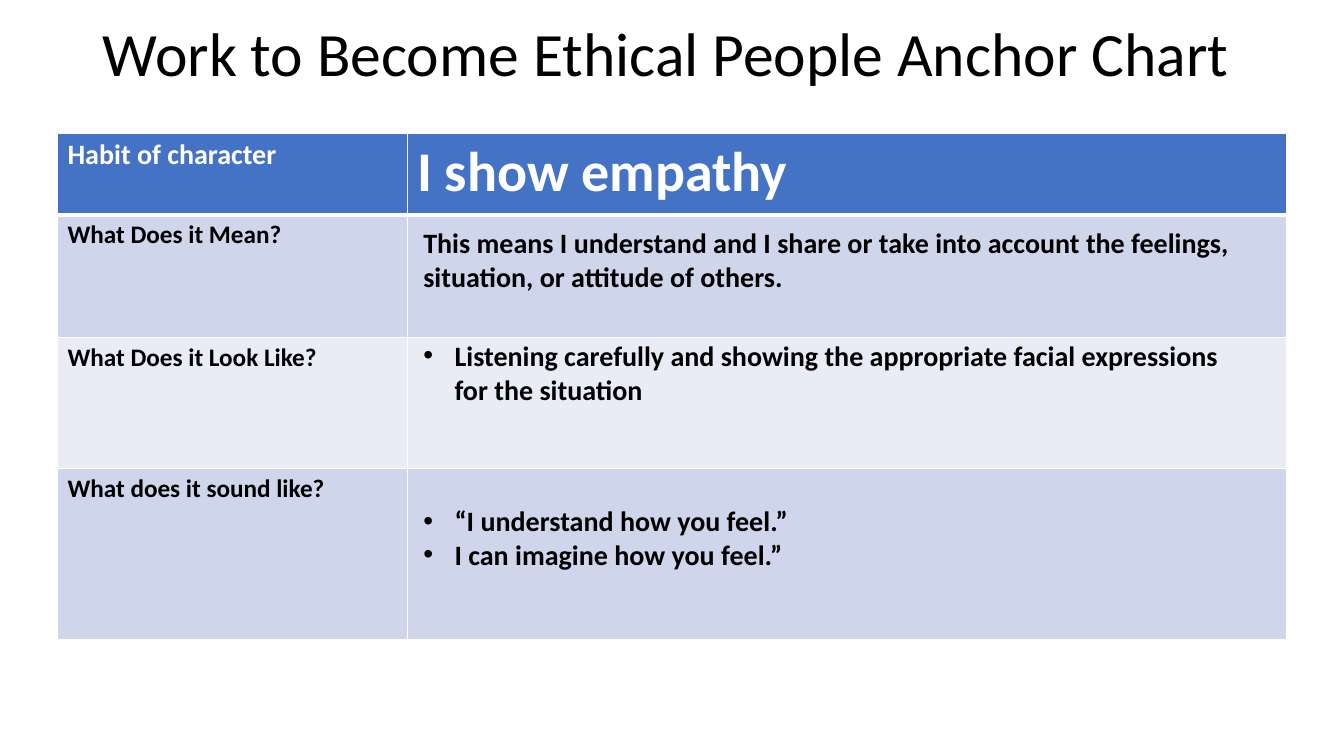
from dataclasses import dataclass

from lxml.etree import SubElement
from pptx import Presentation
from pptx.dml.color import RGBColor
from pptx.enum.text import MSO_ANCHOR, MSO_AUTO_SIZE, PP_ALIGN
from pptx.oxml.ns import qn
from pptx.slide import Slide
from pptx.table import _Cell
from pptx.text.text import _Paragraph
from pptx.util import Inches, Pt

FONT = "Calibri"
BLACK = "000000"
WHITE = "FFFFFF"
TITLE = "Work to Become Ethical People Anchor Chart"
COLUMN_WIDTHS = (3.47, 8.72)
BULLET_INDENT = 0.31


@dataclass(frozen=True)
class ChartRow:
    label: str
    height: float
    fill: str
    heading: str = ""
    size: int = 18
    color: str = BLACK
    top_border: int = 1
    bottom_border: int = 1


@dataclass(frozen=True)
class Answer:
    top: float
    width: float
    lines: tuple[str, ...]
    bulleted: bool = True


ROWS = (
    ChartRow("Habit of character", 0.81, "4472C4", "I show empathy", 20, WHITE, bottom_border=3),
    ChartRow("What Does it Mean?", 1.22, "CFD5EA", top_border=3),
    ChartRow("What Does it Look Like?", 1.3, "E9EBF5"),
    ChartRow("What does it sound like?", 1.7, "CFD5EA"),
)

ANSWERS = (
    Answer(2.19, 8.28, (
        "This means I understand and I share or take into account the feelings, "
        "situation, or attitude of others.",
    ), bulleted=False),
    Answer(3.31, 8.35, (
        "Listening carefully and showing the appropriate facial expressions for the situation",
    )),
    Answer(4.95, 8.35, ("“I understand how you feel.”", "I can imagine how you feel.”")),
)


def rgb(color: str) -> RGBColor:
    return RGBColor.from_string(color)


def add_run(paragraph: _Paragraph, text: str, size: int, color: str = BLACK, bold: bool = True) -> None:
    run = paragraph.add_run()
    run.text = text
    run.font.name = FONT
    run.font.size = Pt(size)
    run.font.bold = bold
    run.font.color.rgb = rgb(color)


def add_bullet(paragraph: _Paragraph) -> None:
    properties = paragraph._p.get_or_add_pPr()
    properties.set("marL", str(Inches(BULLET_INDENT)))
    properties.set("indent", str(-Inches(BULLET_INDENT)))
    SubElement(properties, qn("a:buFont"), typeface="Arial")
    SubElement(properties, qn("a:buChar"), char="•")


def format_cell(cell: _Cell, row: ChartRow) -> None:
    properties = cell._tc.get_or_add_tcPr()
    borders = {"lnL": 1, "lnR": 1, "lnT": row.top_border, "lnB": row.bottom_border}
    for side, width in borders.items():
        line = SubElement(properties, qn(f"a:{side}"), w=str(Pt(width)))
        SubElement(SubElement(line, qn("a:solidFill")), qn("a:srgbClr"), val=WHITE)
    cell.fill.solid()
    cell.fill.fore_color.rgb = rgb(row.fill)


def add_title(slide: Slide) -> None:
    title = slide.shapes.title
    title.left, title.top = Inches(0.92), Inches(0.08)
    title.width, title.height = Inches(11.5), Inches(0.96)
    title.text_frame.vertical_anchor = MSO_ANCHOR.MIDDLE
    paragraph = title.text_frame.paragraphs[0]
    paragraph.alignment = PP_ALIGN.LEFT
    paragraph.line_spacing = 0.9
    add_run(paragraph, TITLE, 44, bold=False)


def add_anchor_table(slide: Slide) -> None:
    table = slide.shapes.add_table(
        len(ROWS), len(COLUMN_WIDTHS), Inches(0.57), Inches(1.32),
        Inches(sum(COLUMN_WIDTHS)), Inches(sum(row.height for row in ROWS)),
    ).table
    for column, width in zip(table.columns, COLUMN_WIDTHS):
        column.width = Inches(width)
    for index, row in enumerate(ROWS):
        table.rows[index].height = Inches(row.height)
        label_cell, heading_cell = table.rows[index].cells
        format_cell(label_cell, row)
        format_cell(heading_cell, row)
        add_run(label_cell.text_frame.paragraphs[0], row.label, row.size, row.color)
        if row.heading:
            add_run(heading_cell.text_frame.paragraphs[0], row.heading, 40, row.color)


def add_answer(slide: Slide, answer: Answer) -> None:
    box = slide.shapes.add_textbox(Inches(4.1), Inches(answer.top), Inches(answer.width), Inches(0.77))
    frame = box.text_frame
    frame.word_wrap = True
    frame.auto_size = MSO_AUTO_SIZE.SHAPE_TO_FIT_TEXT
    for index, line in enumerate(answer.lines):
        paragraph = frame.add_paragraph() if index else frame.paragraphs[0]
        if answer.bulleted:
            add_bullet(paragraph)
        add_run(paragraph, line, 20)


def main() -> None:
    presentation = Presentation()
    presentation.slide_width = Inches(13.33)
    presentation.slide_height = Inches(7.5)
    slide = presentation.slides.add_slide(presentation.slide_layouts[5])
    add_title(slide)
    add_anchor_table(slide)
    for answer in ANSWERS:
        add_answer(slide, answer)
    presentation.save("out.pptx")


if __name__ == "__main__":
    main()
